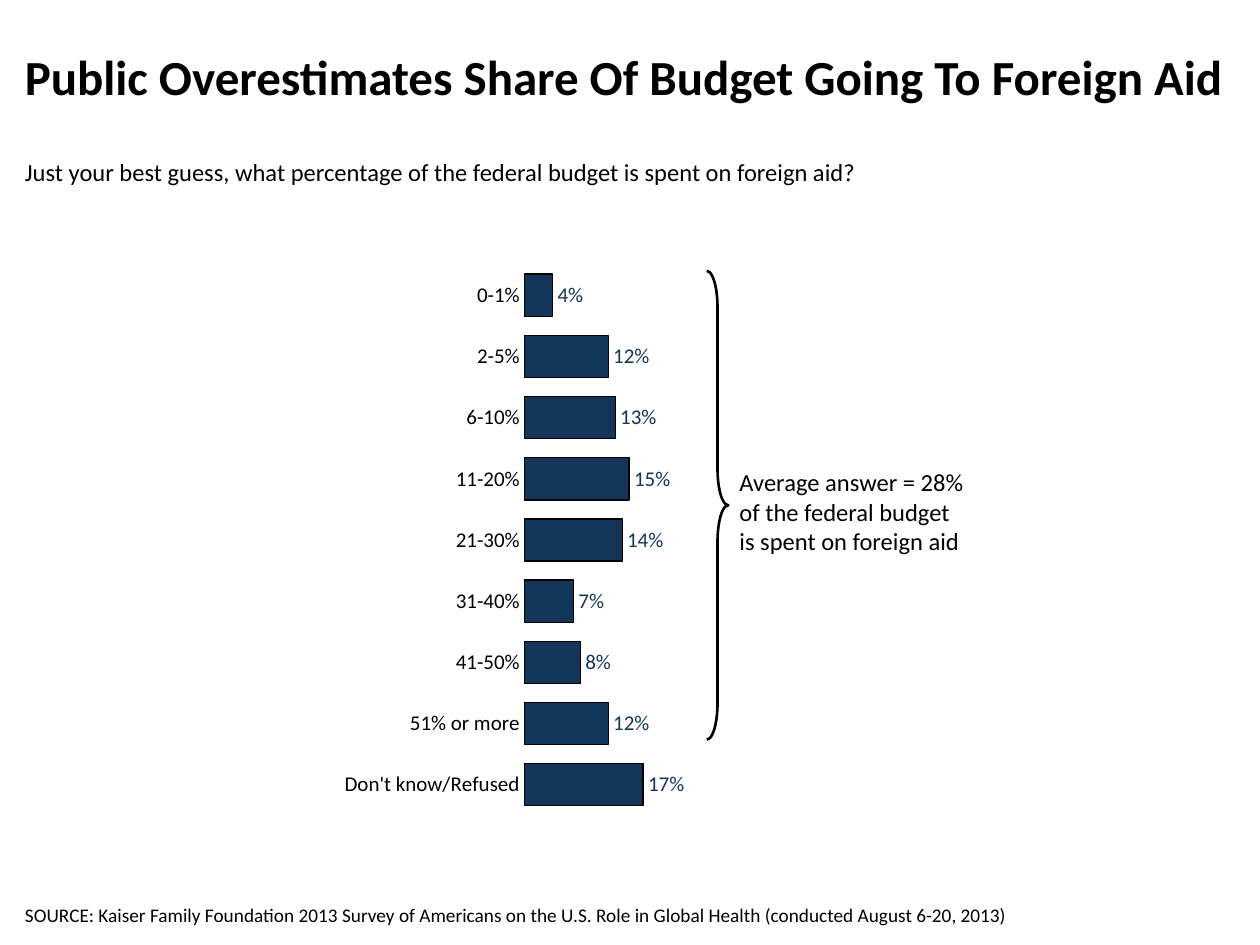
from lxml import etree
from pptx import Presentation
from pptx.chart.data import CategoryChartData
from pptx.dml.color import RGBColor
from pptx.enum.chart import XL_CHART_TYPE, XL_LABEL_POSITION, XL_TICK_MARK
from pptx.enum.shapes import MSO_SHAPE
from pptx.enum.text import MSO_ANCHOR
from pptx.oxml.ns import qn
from pptx.util import Inches, Pt

BAR = XL_CHART_TYPE.BAR_CLUSTERED
OUT_END = XL_LABEL_POSITION.OUTSIDE_END
NO_TICK = XL_TICK_MARK.NONE
BRACE = MSO_SHAPE.RIGHT_BRACE
TOP, MIDDLE, BOTTOM = MSO_ANCHOR.TOP, MSO_ANCHOR.MIDDLE, MSO_ANCHOR.BOTTOM

FONT = "Calibri"
COLORS = {"ink": "000000", "bar": "133559"}


def style(font, size, color, bold=False):
    font.name = FONT
    font.size = Pt(size)
    font.bold = bold
    font.color.rgb = RGBColor.from_string(COLORS[color])


prs = Presentation()
prs.slide_width, prs.slide_height = Inches(10), Inches(7.5)
slide = prs.slides.add_slide(prs.slide_layouts[6])
ink = RGBColor.from_string(COLORS["ink"])

# Bar chart of answers
answers = {
    "0-1%": 0.04,
    "2-5%": 0.12,
    "6-10%": 0.13,
    "11-20%": 0.15,
    "21-30%": 0.14,
    "31-40%": 0.07,
    "41-50%": 0.08,
    "51% or more": 0.12,
    "Don't know/Refused": 0.17,
}
data = CategoryChartData(number_format="0%")
data.categories = list(answers)
data.add_series("Series 1", list(answers.values()))
chart = slide.shapes.add_chart(
    BAR, Inches(1.36), Inches(1.96), Inches(8.5), Inches(4.7), data).chart
style(chart.font, 18, "ink")
chart.has_legend = False
chart.has_title = False

cats = chart.category_axis
cats.reverse_order = True
cats.major_tick_mark = NO_TICK
cats.format.line.fill.background()
style(cats.tick_labels.font, 12, "ink")

scale = chart.value_axis
scale.minimum_scale, scale.maximum_scale = 0, 1
scale.has_major_gridlines = False
scale.visible = False

plot = chart.plots[0]
plot.gap_width = 45
plot.vary_by_categories = False
bars = plot.series[0].format
bars.fill.solid()
bars.fill.fore_color.rgb = RGBColor.from_string(COLORS["bar"])
bars.line.color.rgb = ink
bars.line.width = Pt(0.75)

plot.has_data_labels = True
labels = plot.data_labels
labels.show_value = True
labels.position = OUT_END
labels.number_format = "0%"
labels.number_format_is_linked = False
style(labels.font, 12, "bar")

# Fixed inner plot area, as shares of the chart
area = chart._chartSpace.chart.plotArea
for old in area.findall(qn("c:layout")):
    area.remove(old)
layout = etree.Element(qn("c:layout"))
area.insert(0, layout)
manual = etree.SubElement(layout, qn("c:manualLayout"))
for tag, val in [("layoutTarget", "inner"), ("xMode", "edge"), ("yMode", "edge"),
                 ("x", 0.33), ("y", 0.03), ("w", 0.65), ("h", 0.93)]:
    etree.SubElement(manual, qn(f"c:{tag}")).set("val", str(val))

# Brace over the answers that were averaged
brace = slide.shapes.add_shape(
    BRACE, Inches(5.61), Inches(2.15), Inches(0.17), Inches(3.72))
brace.shadow.inherit = False
brace.adjustments[0] = 1.69
brace.adjustments[1] = 0.5
brace.fill.background()
brace.line.color.rgb = ink
brace.line.width = Pt(1.5)

# Texts: place, anchor, size, bold, wording
texts = [
    ((0.1, 0.1, 9.8, 1), MIDDLE, 28, True,
     "Public Overestimates Share Of Budget Going To Foreign Aid"),
    ((0.1, 1.2, 9.83, 0.6), TOP, 14, False,
     "Just your best guess, what percentage of the federal budget is spent on foreign aid?"),
    ((5.77, 3.66, 1.99, 0.81), TOP, 14, False,
     "Average answer = 28% of the federal budget is spent on foreign aid"),
    ((0.1, 6.8, 9.1, 0.6), BOTTOM, 11, False,
     "SOURCE: Kaiser Family Foundation 2013 Survey of Americans on the U.S. Role in "
     "Global Health (conducted August 6-20, 2013)"),
]
for place, anchor, size, bold, words in texts:
    frame = slide.shapes.add_textbox(*map(Inches, place)).text_frame
    frame.word_wrap = True
    frame.vertical_anchor = anchor
    frame.text = words
    style(frame.paragraphs[0].font, size, "ink", bold)

prs.save("out.pptx")
